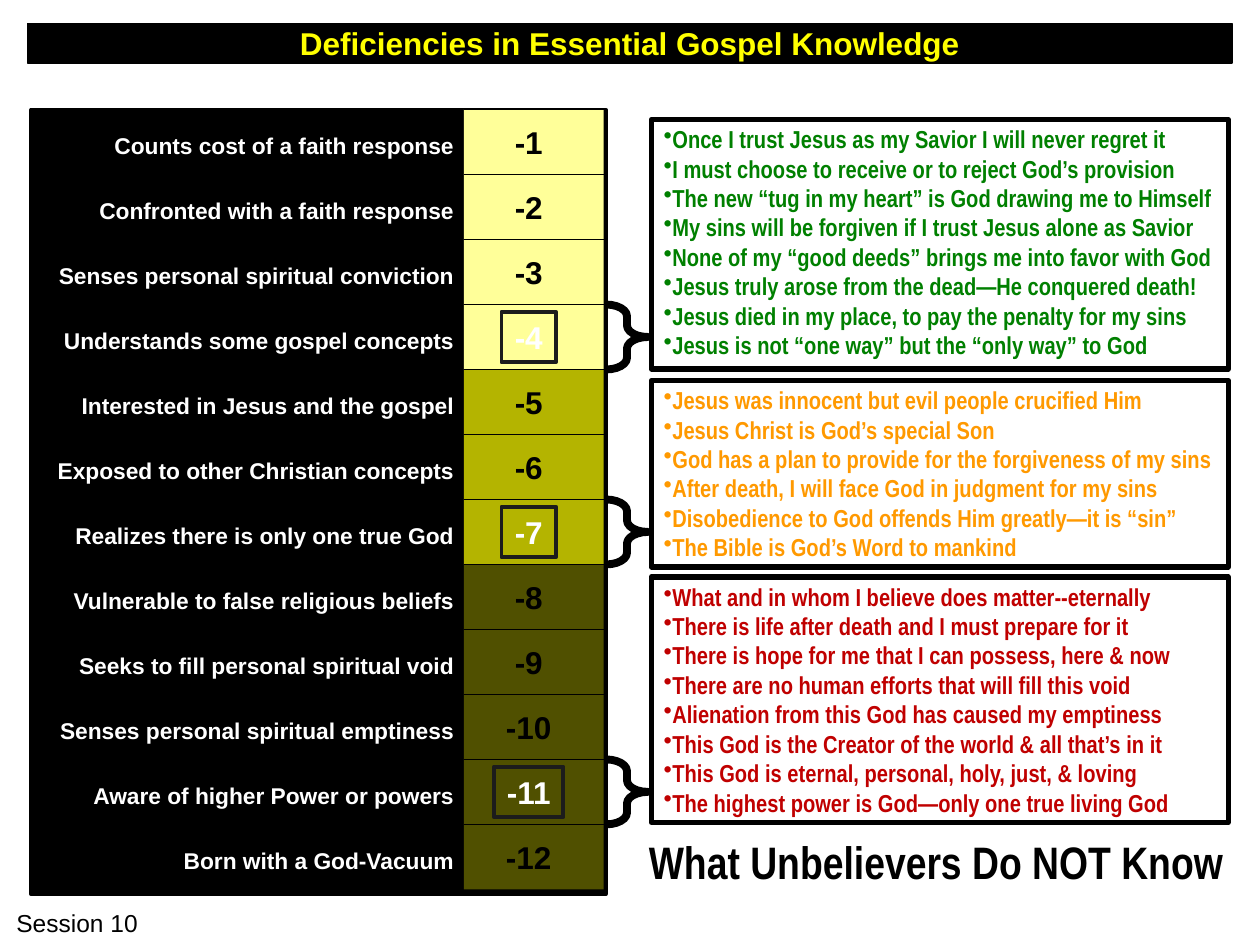
from lxml import etree
from pptx import Presentation
from pptx.dml.color import RGBColor
from pptx.enum.shapes import MSO_CONNECTOR, MSO_SHAPE
from pptx.enum.text import MSO_ANCHOR, PP_ALIGN
from pptx.oxml.ns import qn
from pptx.util import Cm, Pt

RECT, BRACE = MSO_SHAPE.RECTANGLE, MSO_SHAPE.RIGHT_BRACE
STRAIGHT = MSO_CONNECTOR.STRAIGHT
LEFT, CENTER, RIGHT = PP_ALIGN.LEFT, PP_ALIGN.CENTER, PP_ALIGN.RIGHT
TOP, MIDDLE = MSO_ANCHOR.TOP, MSO_ANCHOR.MIDDLE

COLORS = {
    "black": "000000", "white": "FFFFFF", "yellow": "FFFF00", "frame": "1C1C1C",
    "light": "FFFF99", "olive": "B4B400", "dark": "505000",
    "green": "008000", "orange": "FF9900", "red": "C00000",
}
ROW_H = 1.31
SCALE_BOX = (0.63, 2.21, 11.58, 15.82)
STAGES = [
    ("Counts cost of a faith response", "light"),
    ("Confronted with a faith response", "light"),
    ("Senses personal spiritual conviction", "light"),
    ("Understands some gospel concepts", "light"),
    ("Interested in Jesus and the gospel", "olive"),
    ("Exposed to other Christian concepts", "olive"),
    ("Realizes there is only one true God", "olive"),
    ("Vulnerable to false religious beliefs", "dark"),
    ("Seeks to fill personal spiritual void", "dark"),
    ("Senses personal spiritual emptiness", "dark"),
    ("Aware of higher Power or powers", "dark"),
    ("Born with a God-Vacuum", "dark"),
]
# top, height, colour, stage the brace points from, statements
PANELS = [
    (2.41, 5.03, "green", 4, [
        "Once I trust Jesus as my Savior I will never regret it",
        "I must choose to receive or to reject God’s provision",
        "The new “tug in my heart” is God drawing me to Himself",
        "My sins will be forgiven if I trust Jesus alone as Savior",
        "None of my “good deeds” brings me into favor with God",
        "Jesus truly arose from the dead—He conquered death!",
        "Jesus died in my place, to pay the penalty for my sins",
        "Jesus is not “one way” but the “only way” to God",
    ]),
    (7.67, 3.76, "orange", 7, [
        "Jesus was innocent but evil people crucified Him",
        "Jesus Christ is God’s special Son",
        "God has a plan to provide for the forgiveness of my sins",
        "After death, I will face God in judgment for my sins",
        "Disobedience to God offends Him greatly—it is “sin”",
        "The Bible is God’s Word to mankind",
    ]),
    (11.63, 4.95, "red", 11, [
        "What and in whom I believe does matter--eternally",
        "There is life after death and I must prepare for it",
        "There is hope for me that I can possess, here & now",
        "There are no human efforts that will fill this void",
        "Alienation from this God has caused my emptiness",
        "This God is the Creator of the world & all that’s in it",
        "This God is eternal, personal, holy, just, & loving",
        "The highest power is God—only one true living God",
    ]),
]
BOXED = {panel[3] for panel in PANELS}


def rgb(name):
    return RGBColor.from_string(COLORS[name])


def add_shape(s, kind, box, fill=None, line=None, weight=1):
    sp = s.shapes.add_shape(kind, *map(Cm, box))
    sp.shadow.inherit = False
    if fill:
        sp.fill.solid()
        sp.fill.fore_color.rgb = rgb(fill)
    else:
        sp.fill.background()
    if line:
        sp.line.color.rgb = rgb(line)
        sp.line.width = Pt(weight)
    else:
        sp.line.fill.background()
    return sp


def write(sp, lines, size, color, font="Arial", bold=True, align=LEFT, anchor=TOP, wrap=True):
    tf = sp.text_frame
    tf.word_wrap = wrap
    tf.vertical_anchor = anchor
    for i, line in enumerate(lines):
        p = tf.paragraphs[0] if i == 0 else tf.add_paragraph()
        p.text = line
        p.alignment = align
        p.font.name = font
        p.font.size = Pt(size)
        p.font.bold = bold
        p.font.color.rgb = rgb(color)
    return tf


def add_text(s, box, lines, size, color, **style):
    return write(s.shapes.add_textbox(*map(Cm, box)), lines, size, color, **style)


def add_bullets(tf):
    for p in tf.paragraphs:
        pPr = p._p.get_or_add_pPr()
        pPr.set("marL", "0")
        pPr.set("indent", "0")
        bullet = etree.Element(qn("a:buChar"), char="•")
        pPr.insert_element_before(bullet, "a:tabLst", "a:defRPr", "a:extLst")


def add_rule(s, x, y, width):
    line = s.shapes.add_connector(STRAIGHT, Cm(x), Cm(y), Cm(x + width), Cm(y))
    line.line.color.rgb = rgb("black")
    line.line.width = Pt(1)
    etree.SubElement(line._element.spPr, qn("a:effectLst"))


def add_title(s, box):
    sp = add_shape(s, RECT, box, "black", "black", 0.75)
    write(sp, ["Deficiencies in Essential Gospel Knowledge"], 18, "yellow",
          align=CENTER, anchor=MIDDLE, wrap=False)


def add_scale(s, box):
    """Twelve stages, each a label beside a numbered cell."""
    x, y, width, _ = box
    add_shape(s, RECT, box, "black", "black", 2.25)
    cell_x, cell_w, number_h = x + 8.72, 2.82, 1.02
    for i, (label, shade) in enumerate(STAGES):
        number, row_y = i + 1, y + i * ROW_H
        add_shape(s, RECT, (cell_x, row_y, cell_w, ROW_H), shade)
        add_rule(s, cell_x, row_y, cell_w)
        add_text(s, (x, row_y + 0.32, 8.76, 0.81), [label], 13, "white", align=RIGHT)
        number_w = 1.1 if number < 10 else 1.4
        number_box = (cell_x + (cell_w - number_w) / 2 - 0.1,
                      row_y + (ROW_H - number_h) / 2, number_w, number_h)
        boxed = number in BOXED
        sp = add_shape(s, RECT, number_box, line="frame" if boxed else None, weight=2.25)
        write(sp, [f"-{number}"], 18, "white" if boxed else "black",
              align=CENTER, anchor=MIDDLE, wrap=False)


def add_panel(s, box, color, stage, lines):
    """Framed statements with a brace reaching back to their stage."""
    x, y, width, height = box
    add_bullets(add_text(s, (x, y - 0.03, width + 0.5, height), lines, 14, color,
                         font="Arial Narrow"))
    brace_y = SCALE_BOX[1] + (stage - 1) * ROW_H
    brace = add_shape(s, BRACE, (x - 0.91, brace_y, 0.84, ROW_H), line="black", weight=4.5)
    brace.adjustments[0] = 0.28
    add_shape(s, RECT, box, line="black", weight=3)


def main():
    prs = Presentation()
    prs.slide_width, prs.slide_height = Cm(25.4), Cm(19.05)
    s = prs.slides.add_slide(prs.slide_layouts[6])
    add_title(s, (0.56, 0.48, 24.28, 0.79))
    add_scale(s, SCALE_BOX)
    for top, height, color, stage, lines in PANELS:
        add_panel(s, (13.13, top, 11.63, height), color, stage, lines)
    add_text(s, (12.83, 16.69, 12.5, 1.37), ["What Unbelievers Do NOT Know"], 26, "black",
             font="Arial Narrow")
    add_text(s, (0.08, 18.19, 3.96, 0.86), ["Session 10"], 14, "black", bold=False)
    prs.save("out.pptx")


if __name__ == "__main__":
    main()
